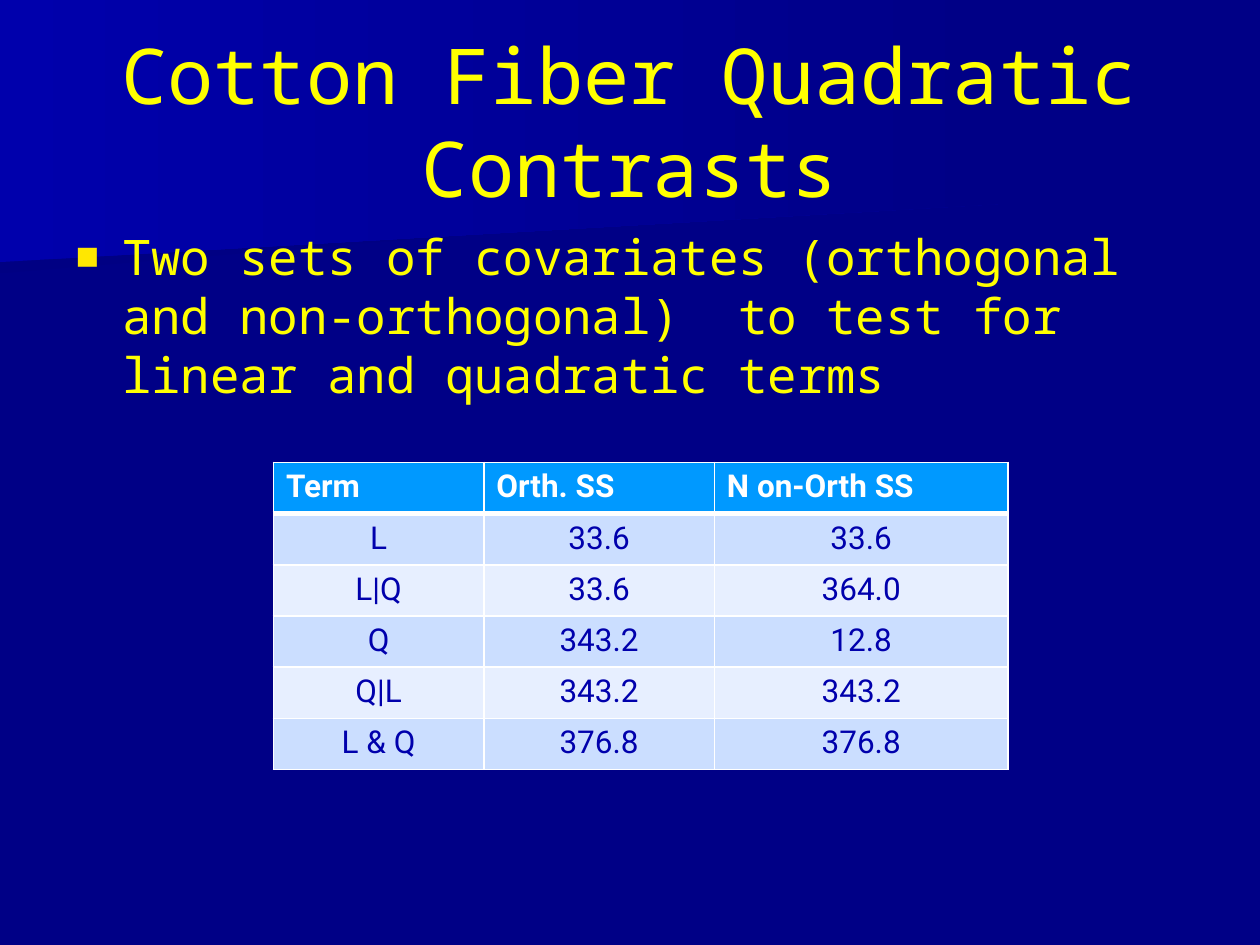
from dataclasses import dataclass

from lxml import etree
from pptx import Presentation
from pptx import util as u
from pptx.dml.color import RGBColor
from pptx.enum import text
from pptx.oxml.ns import qn

PX = 9144  # EMU per px, 100 px to the inch

NAVY = RGBColor(0x00, 0x00, 0x86)
DEEP_NAVY = RGBColor(0x00, 0x00, 0x83)
ROYAL = RGBColor(0x00, 0x00, 0xAC)
YELLOW = RGBColor(0xFF, 0xFF, 0x00)
GOLD = RGBColor(0xFF, 0xE7, 0x01)
WHITE = RGBColor(0xFF, 0xFF, 0xFF)
HEADER_BLUE = RGBColor(0x00, 0x99, 0xFF)
BANDS = (RGBColor(0xE7, 0xEF, 0xFF), RGBColor(0xCB, 0xDE, 0xFF))

TEXT_FONT = "Noto Sans Mono"
TABLE_FONT = "Roboto"


@dataclass
class Box:
    left: int
    top: int
    width: int
    height: int

    def emu(self) -> tuple:
        return tuple(PX * side for side in (self.left, self.top, self.width, self.height))


@dataclass
class Sweep:
    points: list
    start: RGBColor
    end: RGBColor


SWEEPS = [
    Sweep([(778, 153), (0, 217), (0, 101), (779, 101), (778, 128)], DEEP_NAVY, NAVY),
    Sweep([(792, 162), (0, 208), (0, 0), (792, 0)], ROYAL, NAVY),
]
ROWS = [
    ("Term", "Orth. SS", "N on-Orth SS"),
    ("L", "33.6", "33.6"),
    ("L|Q", "33.6", "364.0"),
    ("Q", "343.2", "12.8"),
    ("Q|L", "343.2", "343.2"),
    ("L & Q", "376.8", "376.8"),
]
COLUMN_WIDTHS = (167, 183, 233)
TABLE_HEIGHT = 244


def style(font, name: str, size: int, color: RGBColor, bold: bool = False) -> None:
    font.name, font.size, font.bold = name, u.Pt(size), bold
    font.color.rgb = color


def draw_sweep(page, sweep: Sweep, depth: int) -> None:
    builder = page.shapes.build_freeform(*sweep.points[0], scale=PX)
    builder.add_line_segments(sweep.points[1:], close=True)
    shape = builder.convert_to_shape()
    shape.shadow.inherit = False
    shape.line.fill.background()
    shape.fill.gradient()
    shape.fill.gradient_angle = 0
    for stop, color in zip(shape.fill.gradient_stops, (sweep.start, sweep.end)):
        stop.color.rgb = color
    # The first two children of the tree are its properties
    page.shapes._spTree.insert(2 + depth, shape._element)


def fill_placeholder(holder, box: Box, words: str, anchor):
    holder.left, holder.top, holder.width, holder.height = box.emu()
    frame = holder.text_frame
    frame.text = words
    frame.word_wrap = True
    frame.auto_size = text.MSO_AUTO_SIZE.NONE
    frame.vertical_anchor = anchor
    para = frame.paragraphs[0]
    para.space_before = u.Pt(0)
    return para


def add_bullet(para, char: str, color: RGBColor, percent: int, indent: int) -> None:
    props = para._p.get_or_add_pPr()
    props.set("marL", str(indent * PX))
    props.set("indent", str(-indent * PX))
    tint = etree.SubElement(props, qn("a:buClr"))
    etree.SubElement(tint, qn("a:srgbClr"), val=str(color))
    etree.SubElement(props, qn("a:buSzPct"), val=str(percent * 1000))
    etree.SubElement(props, qn("a:buChar"), char=char)


def add_borders(cell, top: int, bottom: int) -> None:
    props = cell._tc.get_or_add_tcPr()
    for side, points in (("L", 1), ("R", 1), ("T", top), ("B", bottom)):
        line = etree.SubElement(props, qn(f"a:ln{side}"), w=str(u.Pt(points)))
        solid = etree.SubElement(line, qn("a:solidFill"))
        etree.SubElement(solid, qn("a:srgbClr"), val=str(WHITE))


def draw_table(page, left: int, top: int) -> None:
    box = Box(left, top, sum(COLUMN_WIDTHS), TABLE_HEIGHT)
    # Rows share the table height equally
    table = page.shapes.add_table(len(ROWS), len(COLUMN_WIDTHS), *box.emu()).table
    for column, width in zip(table.columns, COLUMN_WIDTHS):
        column.width = width * PX
    for r, row in enumerate(ROWS):
        header = r == 0
        for c, words in enumerate(row):
            cell = table.cell(r, c)
            add_borders(cell, top=3 if r == 1 else 1, bottom=3 if header else 1)
            cell.fill.solid()
            cell.fill.fore_color.rgb = HEADER_BLUE if header else BANDS[r % 2]
            cell.text_frame.text = words
            para = cell.text_frame.paragraphs[0]
            para.alignment = text.PP_ALIGN.LEFT if header else text.PP_ALIGN.CENTER
            style(para.runs[0].font, TABLE_FONT, 18, WHITE if header else ROYAL, header)


def main() -> None:
    deck = Presentation()
    deck.slide_width, deck.slide_height = 1000 * PX, 750 * PX
    page = deck.slides.add_slide(deck.slide_layouts[1])

    # Background
    page.background.fill.solid()
    page.background.fill.fore_color.rgb = NAVY
    for depth, sweep in enumerate(SWEEPS):
        draw_sweep(page, sweep, depth)

    # Title
    title = fill_placeholder(page.shapes.title, Box(50, 33, 900, 125),
                             "Cotton Fiber Quadratic Contrasts", text.MSO_ANCHOR.MIDDLE)
    title.alignment = text.PP_ALIGN.CENTER
    style(title.runs[0].font, TEXT_FONT, 44, YELLOW)

    # Bullet, just wide enough for "(orthogonal" to stay on the first line
    body = fill_placeholder(
        page.placeholders[1], Box(50, 175, 853, 158),
        "Two sets of covariates (orthogonal and non-orthogonal)  to test for "
        "linear and quadratic terms", text.MSO_ANCHOR.TOP)
    add_bullet(body, "■", GOLD, 80, 37)
    style(body.runs[0].font, TEXT_FONT, 28, YELLOW)

    # Sums of squares
    draw_table(page, 217, 367)

    deck.save("out.pptx")


if __name__ == "__main__":
    main()
